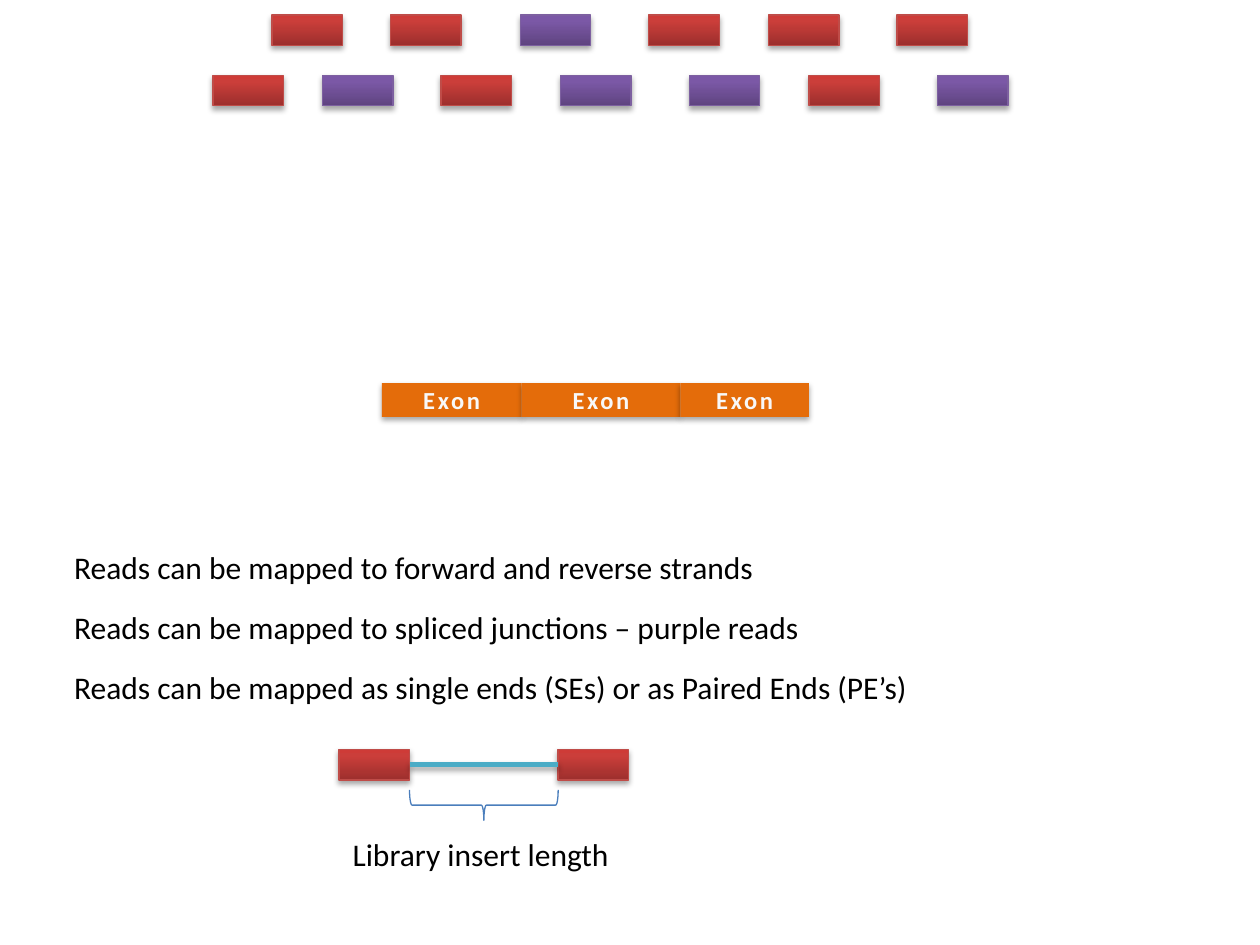
from copy import deepcopy

from lxml import etree
from pptx import Presentation
from pptx.dml.color import RGBColor
from pptx.enum.shapes import MSO_CONNECTOR, MSO_SHAPE
from pptx.enum.text import MSO_ANCHOR, MSO_AUTO_SIZE, PP_ALIGN
from pptx.oxml import parse_xml
from pptx.oxml.ns import nsdecls, qn
from pptx.util import Inches, Pt

BLACK = RGBColor(0x00, 0x00, 0x00)
OFF_WHITE = RGBColor(0xF8, 0xF8, 0xF8)
ORANGE = RGBColor(0xE4, 0x6C, 0x0A)
TEAL = RGBColor(0x4B, 0xAC, 0xC6)
BLUE = RGBColor(0x4B, 0x7E, 0xBC)
RED_LINE = RGBColor(0xBF, 0x4C, 0x48)
RED_STOPS = (RGBColor(0x9C, 0x2F, 0x2D), RGBColor(0xCB, 0x3E, 0x3A), RGBColor(0xCE, 0x3B, 0x37))
PURPLE_LINE = RGBColor(0x7D, 0x60, 0xA0)
PURPLE_STOPS = (RGBColor(0x5F, 0x44, 0x80), RGBColor(0x7B, 0x58, 0xA6), RGBColor(0x7C, 0x57, 0xA8))

RED = (RED_LINE, RED_STOPS)
PURPLE = (PURPLE_LINE, PURPLE_STOPS)
STOP_POSITIONS = (0, 0.8, 1)

READ_WIDTH, READ_HEIGHT = 0.56, 0.24
READ_ROWS = (
    (0.12, ((2.16, RED), (3.1, RED), (4.13, PURPLE), (5.15, RED), (6.1, RED), (7.12, RED))),
    (0.6, ((1.69, RED), (2.56, PURPLE), (3.5, RED), (4.45, PURPLE), (5.47, PURPLE),
           (6.42, RED), (7.44, PURPLE))),
    (5.95, ((2.69, RED), (4.43, RED))),
)
EXON_LEFT, EXON_TOP, EXON_HEIGHT = 3.03, 3.04, 0.27
EXON_WIDTHS = (1.11, 1.26, 1.02)
STATEMENTS = (
    ("Reads can be mapped to forward and reverse strands", 5.66),
    ("Reads can be mapped to spliced junctions – purple reads", 6.03),
    ("Reads can be mapped as single ends (SEs) or as Paired Ends (PE’s)", 6.89),
)
INSERT_START, INSERT_END = 3.25, 4.43


class SlideBuilder:
    font_name = "Calibri"

    def __init__(self, slide):
        self.slide = slide

    def set_font(self, paragraph, size, color, bold=False):
        paragraph.font.name = self.font_name
        paragraph.font.size = Pt(size)
        paragraph.font.color.rgb = color
        paragraph.font.bold = bold

    def add_shadow(self, shape):
        properties = shape._element.spPr
        for effects in properties.findall(qn("a:effectLst")):
            properties.remove(effects)
        properties.append(parse_xml(
            f'<a:effectLst {nsdecls("a")}>'
            '<a:outerShdw blurRad="40000" dist="23000" dir="5400000" rotWithShape="0">'
            '<a:srgbClr val="000000"><a:alpha val="35000"/></a:srgbClr>'
            '</a:outerShdw></a:effectLst>'))

    def shape(self, kind, left, top, width, height):
        shape = self.slide.shapes.add_shape(
            kind, Inches(left), Inches(top), Inches(width), Inches(height))
        shape.shadow.inherit = False
        return shape

    def read(self, left, top, palette):
        line_color, stop_colors = palette
        shape = self.shape(MSO_SHAPE.RECTANGLE, left, top, READ_WIDTH, READ_HEIGHT)
        shape.fill.gradient()
        shape.fill.gradient_angle = 90
        stop_list = next(shape._element.spPr.iter(qn("a:gsLst")))
        stop_list.insert(1, deepcopy(stop_list[0]))
        for stop, position, color in zip(shape.fill.gradient_stops, STOP_POSITIONS, stop_colors):
            stop.position = position
            stop.color.rgb = color
        shape.line.color.rgb = line_color
        shape.line.width = Pt(0.75)
        self.add_shadow(shape)

    def exon(self, left, width):
        shape = self.shape(MSO_SHAPE.RECTANGLE, left, EXON_TOP, width, EXON_HEIGHT)
        shape.fill.solid()
        shape.fill.fore_color.rgb = ORANGE
        shape.line.fill.background()
        self.add_shadow(shape)
        frame = shape.text_frame
        frame.vertical_anchor = MSO_ANCHOR.MIDDLE
        paragraph = frame.paragraphs[0]
        run = paragraph.add_run()
        run.text = "Exon"
        run._r.get_or_add_rPr().set("spc", "150")
        paragraph.alignment = PP_ALIGN.CENTER
        paragraph._p.get_or_add_pPr().set("rtl", "1")
        self.set_font(paragraph, 14, OFF_WHITE, bold=True)

    def text(self, text, left, top, width):
        box = self.slide.shapes.add_textbox(
            Inches(left), Inches(top), Inches(width), Inches(0.4))
        frame = box.text_frame
        frame.word_wrap = False
        frame.auto_size = MSO_AUTO_SIZE.SHAPE_TO_FIT_TEXT
        frame.text = text
        self.set_font(frame.paragraphs[0], 18, BLACK)

    def line(self, start, end, y):
        connector = self.slide.shapes.add_connector(
            MSO_CONNECTOR.STRAIGHT, Inches(start), Inches(y), Inches(end), Inches(y))
        connector.line.color.rgb = TEAL
        connector.line.width = Pt(3)
        self.add_shadow(connector)

    def brace_below(self, start, end, top, depth):
        span = end - start
        left = (start + end - depth) / 2
        shape = self.shape(MSO_SHAPE.RIGHT_BRACE, left, top + (depth - span) / 2, depth, span)
        shape.rotation = 90
        shape.fill.background()
        shape.line.color.rgb = BLUE
        shape.line.width = Pt(0.75)


def main():
    presentation = Presentation()
    presentation.slide_width = Inches(10)
    presentation.slide_height = Inches(7.5)
    slide = presentation.slides.add_slide(presentation.slide_layouts[6])
    builder = SlideBuilder(slide)

    for top, reads in READ_ROWS:
        for left, palette in reads:
            builder.read(left, top, palette)

    for index, width in enumerate(EXON_WIDTHS):
        builder.exon(EXON_LEFT + sum(EXON_WIDTHS[:index]), width)

    for index, (statement, width) in enumerate(STATEMENTS):
        builder.text(statement, 0.49, 4.3 + 0.475 * index, width)

    builder.line(INSERT_START, INSERT_END, 6.07)
    builder.brace_below(INSERT_START, INSERT_END, 6.27, 0.24)
    builder.text("Library insert length", 2.7, 6.58, 2.26)

    presentation.save("out.pptx")


if __name__ == "__main__":
    main()
